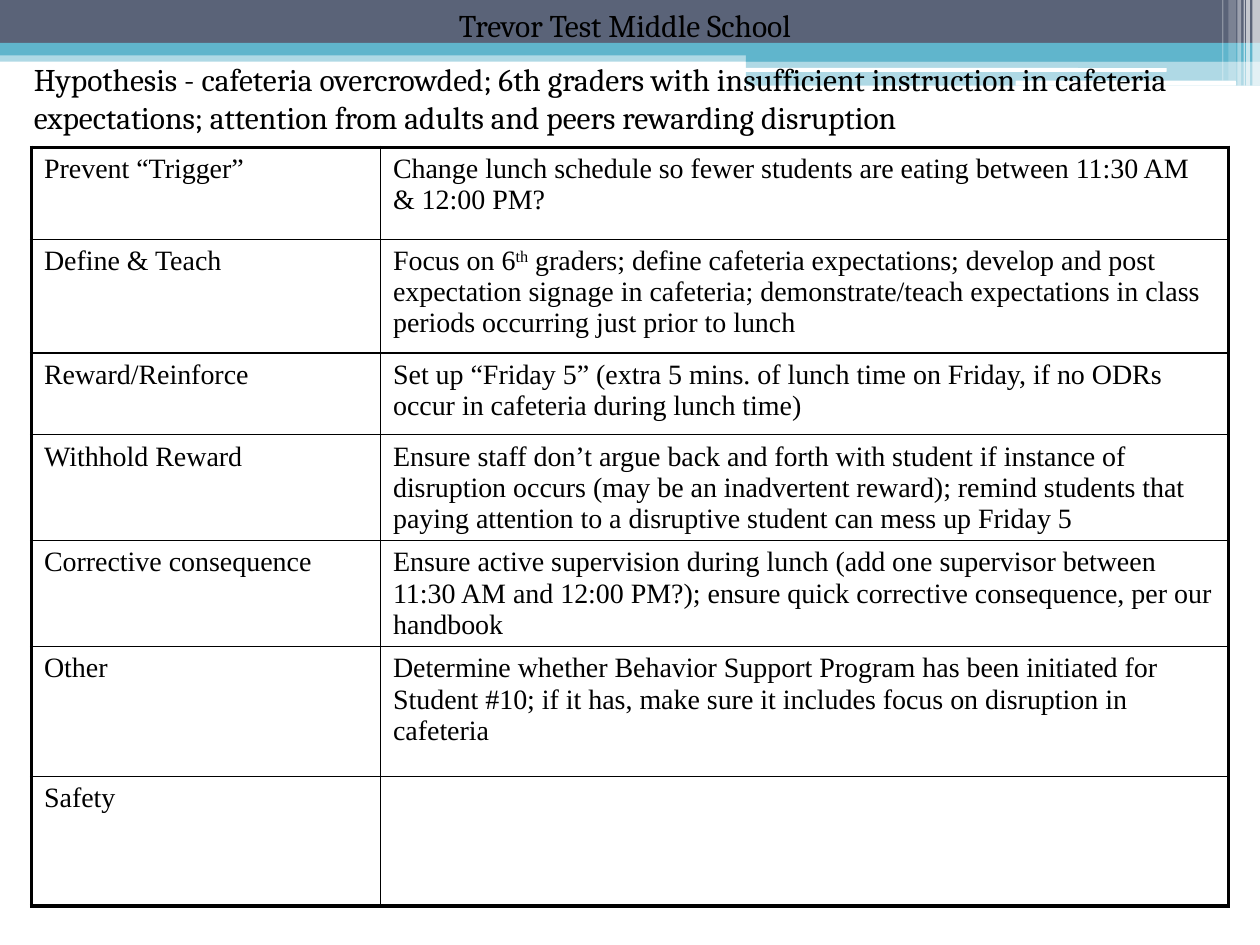
from lxml.etree import SubElement
from pptx import Presentation
from pptx.dml.color import RGBColor
from pptx.enum.shapes import MSO_SHAPE as Preset
from pptx.enum.text import PP_ALIGN as Align
from pptx.oxml.ns import qn
from pptx.util import Inches, Pt

BLACK = RGBColor(0x00, 0x00, 0x00)
WHITE = RGBColor(0xFF, 0xFF, 0xFF)
SLATE = RGBColor(0x5A, 0x63, 0x78)
AQUA = RGBColor(0x60, 0xB5, 0xCC)

COLUMN_WIDTHS = (2.77, 6.73)
ROW_HEIGHTS = (0.73, 0.9, 0.65, 0.84, 0.84, 1.03, 1.03)
PLAN = (
    ("Prevent “Trigger”",
     "Change lunch schedule so fewer students are eating between 11:30 AM & 12:00 PM?"),
    ("Define & Teach",
     "Focus on 6^th^ graders; define cafeteria expectations; develop and post expectation "
     "signage in cafeteria; demonstrate/teach expectations in class periods occurring just "
     "prior to lunch"),
    ("Reward/Reinforce",
     "Set up “Friday 5” (extra 5 mins. of lunch time on Friday, if no ODRs occur in "
     "cafeteria during lunch time)"),
    ("Withhold Reward",
     "Ensure staff don’t argue back and forth with student if instance of disruption occurs "
     "(may be an inadvertent reward); remind students that paying attention to a disruptive "
     "student can mess up Friday 5"),
    ("Corrective consequence",
     "Ensure active supervision during lunch (add one supervisor between 11:30 AM and "
     "12:00 PM?); ensure quick corrective consequence, per our handbook"),
    ("Other",
     "Determine whether Behavior Support Program has been initiated for Student #10; if it "
     "has, make sure it includes focus on disruption in cafeteria"),
    ("Safety", ""),
)
HYPOTHESIS = (
    "Hypothesis - cafeteria overcrowded; 6th graders with insufficient instruction in "
    "cafeteria expectations; attention from adults and peers rewarding disruption"
)


def write_text(paragraph, text, font="Times New Roman", size=16, color=BLACK,
               align=Align.LEFT, space_before=3.2):
    """Fill a paragraph, raising the parts enclosed in carets to superscript."""
    paragraph.alignment = align
    paragraph.space_before = Pt(space_before)
    for index, part in enumerate(text.split("^")):
        run = paragraph.add_run()
        run.text = part
        run.font.name = font
        run.font.size = Pt(size)
        run.font.color.rgb = color
        if index % 2:
            run._r.get_or_add_rPr().set("baseline", "30000")


def add_bar(slide, left, top, width, height, color, opacity=100, preset=Preset.RECTANGLE):
    """Add a borderless bar with an opacity in percent."""
    shape = slide.shapes.add_shape(
        preset, Inches(left), Inches(top), Inches(width), Inches(height))
    shape.shadow.inherit = False
    shape.line.fill.background()
    shape.fill.solid()
    shape.fill.fore_color.rgb = color
    if opacity < 100:
        color_element = shape.fill._xPr.find(qn("a:solidFill"))[0]
        SubElement(color_element, qn("a:alpha")).set("val", str(opacity * 1000))


def add_banner(slide, left, top, width):
    """Draw the layered bands and the pale stripes at their right end."""
    right = left + width
    add_bar(slide, left, top + 0.4, width, 0.09, AQUA, 50)
    add_bar(slide, left, top, width, 0.34, SLATE)
    add_bar(slide, left, top + 0.34, width, 0.1, AQUA)
    add_bar(slide, right - 4.08, top + 0.39, 4.08, 0.1, AQUA)
    add_bar(slide, right - 4.08, top + 0.48, 4.08, 0.2, AQUA, 50)
    add_bar(slide, right - 4.09, top + 0.54, 3.35, 0.03, WHITE, preset=Preset.ROUNDED_RECTANGLE)
    add_bar(slide, right - 1.94, top + 0.64, 1.75, 0.04, WHITE, preset=Preset.ROUNDED_RECTANGLE)
    stripes = (
        (0.06, 0.06, 0.68, 65), (0.11, 0.03, 0.68, 65), (0.13, 0.01, 0.68, 60),
        (0.18, 0.03, 0.68, 40), (0.25, 0.06, 0.64, 20), (0.3, 0.01, 0.64, 30),
    )
    for offset, stripe_width, height, opacity in stripes:
        add_bar(slide, right - offset, top, stripe_width, height, WHITE, opacity)


def set_borders(cell, widths):
    """Give a cell black borders from a mapping of side to width in points."""
    properties = cell._tc.get_or_add_tcPr()
    for index, (side, width) in enumerate(widths.items()):
        line = properties.makeelement(qn(f"a:ln{side}"), {"w": str(Pt(width))})
        fill = SubElement(line, qn("a:solidFill"))
        SubElement(fill, qn("a:srgbClr")).set("val", str(BLACK))
        properties.insert(index, line)


def add_plan_table(slide, left, top):
    """Place the plan table with a heavy frame and thin inner rules."""
    rows, columns = len(PLAN), len(COLUMN_WIDTHS)
    table = slide.shapes.add_table(
        rows, columns, Inches(left), Inches(top),
        Inches(sum(COLUMN_WIDTHS)), Inches(sum(ROW_HEIGHTS))).table
    table.first_row = table.horz_banding = False
    for column, width in zip(table.columns, COLUMN_WIDTHS):
        column.width = Inches(width)
    for row_index, (row, height) in enumerate(zip(table.rows, ROW_HEIGHTS)):
        row.height = Inches(height)
        for column_index, cell in enumerate(row.cells):
            cell.fill.background()
            write_text(cell.text_frame.paragraphs[0], PLAN[row_index][column_index])
            outer = {
                "L": column_index == 0, "R": column_index == columns - 1,
                "T": row_index == 0, "B": row_index == rows - 1,
            }
            set_borders(cell, {side: 2.25 if edge else 1 for side, edge in outer.items()})


def add_heading(slide, left, top, width, height):
    """Place the school name and the hypothesis below it."""
    frame = slide.shapes.add_textbox(
        Inches(left), Inches(top), Inches(width), Inches(height)).text_frame
    frame.word_wrap = True
    style = {"font": "Cambria", "size": 18, "space_before": 9}
    write_text(frame.paragraphs[0], "Trevor Test Middle School", align=Align.CENTER, **style)
    write_text(frame.add_paragraph(), HYPOTHESIS, **style)


def main():
    """Build and save the slide."""
    presentation = Presentation()
    presentation.slide_width = Inches(10)
    presentation.slide_height = Inches(7.5)
    slide = presentation.slides.add_slide(presentation.slide_layouts[6])
    add_banner(slide, 0, 0, 10)
    add_plan_table(slide, 0.25, 1.17)
    add_heading(slide, 0.17, 0, 9.58, 1.45)
    presentation.save("out.pptx")


if __name__ == "__main__":
    main()
